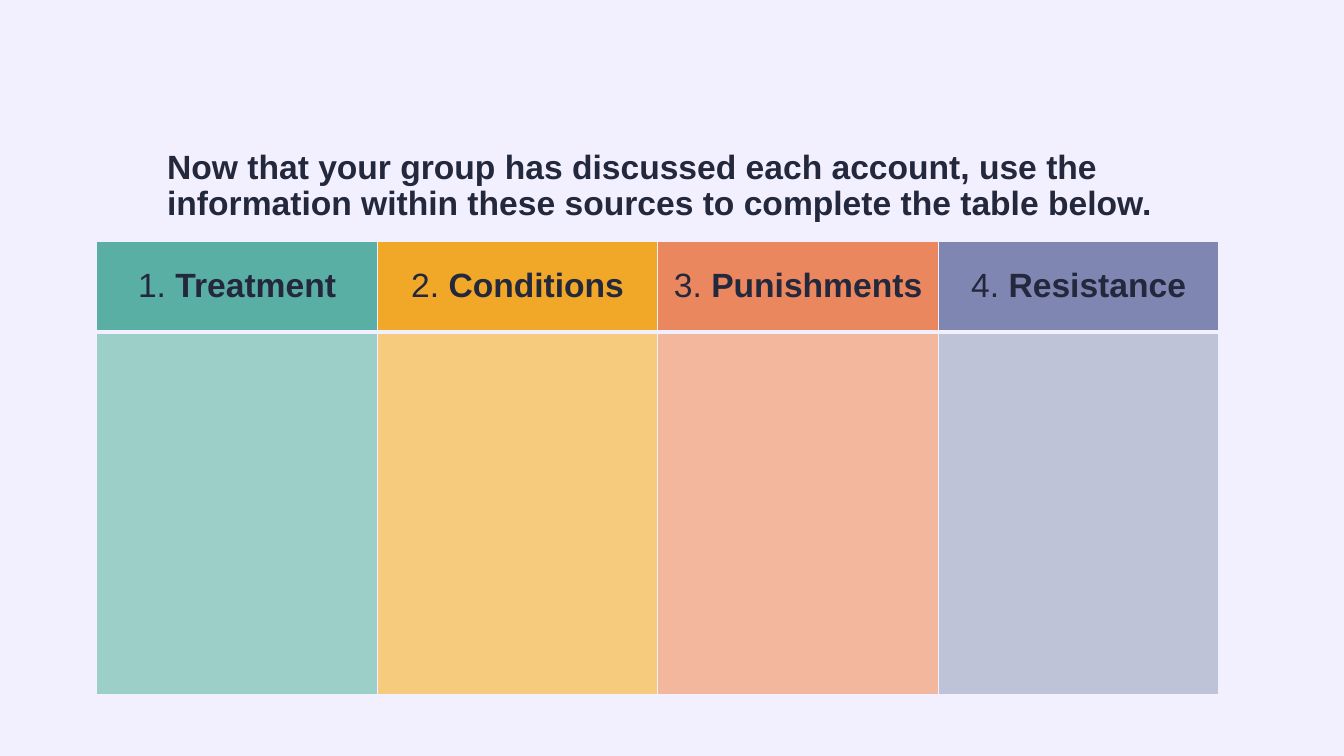
"""Build a slide with a prompt above a four-column table to complete."""
from lxml.etree import SubElement
from pptx import Presentation
from pptx.dml.color import RGBColor
from pptx.enum.text import MSO_ANCHOR, PP_ALIGN
from pptx.oxml.ns import qn
from pptx.util import Inches, Pt

COLOURS = {"page": "F2F0FF", "ink": "24283C"}
TOPICS = [
    ("Treatment", "59AFA4", "9BCFC8"),
    ("Conditions", "F1A828", "F7CB7E"),
    ("Punishments", "EB875E", "F3B79E"),
    ("Resistance", "7E86B1", "BEC3D8"),
]
PROMPT = (
    "Now that your group has discussed each account, use the "
    "information within these sources to complete the table below."
)


class SlideBuilder:
    def __init__(self, page):
        self.page = page
        self.text_format = {"name": "Arial", "size": Pt(24)}
        background = page.background.fill
        background.solid()
        background.fore_color.rgb = RGBColor.from_string(COLOURS["page"])

    def add_span(self, para, text, bold):
        span = para.add_run()
        span.text = text
        for name, value in {**self.text_format, "bold": bold}.items():
            setattr(span.font, name, value)
        span.font.color.rgb = RGBColor.from_string(COLOURS["ink"])

    def add_prompt(self, text, left, top, width, height):
        box = self.page.shapes.add_textbox(
            Inches(left), Inches(top), Inches(width), Inches(height)
        )
        frame = box.text_frame
        frame.word_wrap = True
        frame.vertical_anchor = MSO_ANCHOR.BOTTOM
        para = frame.paragraphs[0]
        para.line_spacing = 0.9
        self.add_span(para, text, True)

    def style_cell(self, cell, fill, widths):
        properties = cell._tc.get_or_add_tcPr()
        for side, width in widths.items():
            line = SubElement(properties, qn(f"a:ln{side}"), w=str(Pt(width)))
            solid = SubElement(line, qn("a:solidFill"))
            SubElement(solid, qn("a:srgbClr"), val=COLOURS["page"])
        cell.fill.solid()
        cell.fill.fore_color.rgb = RGBColor.from_string(fill)

    def add_topic_table(self, topics, left, top, width, row_heights):
        table = self.page.shapes.add_table(
            len(row_heights), len(topics), Inches(left), Inches(top),
            Inches(width), Inches(sum(row_heights)),
        ).table
        for row, height in zip(table.rows, row_heights):
            row.height = Inches(height)
        for index, (topic, head_fill, body_fill) in enumerate(topics):
            head, body = table.cell(0, index), table.cell(1, index)
            self.style_cell(head, head_fill, {"L": 1, "R": 1, "T": 1, "B": 3})
            self.style_cell(body, body_fill, {"L": 1, "R": 1, "T": 3, "B": 1})
            head.vertical_anchor = MSO_ANCHOR.MIDDLE
            para = head.text_frame.paragraphs[0]
            para.alignment = PP_ALIGN.CENTER
            self.add_span(para, f"{index + 1}. ", False)
            self.add_span(para, topic, True)


def main():
    deck = Presentation()
    deck.slide_width, deck.slide_height = Inches(13.33), Inches(7.5)
    builder = SlideBuilder(deck.slides.add_slide(deck.slide_layouts[6]))
    builder.add_prompt(PROMPT, 1.56, 1.36, 11.13, 0.9)
    builder.add_topic_table(TOPICS, 0.96, 2.39, 11.13, [0.9, 3.6])
    deck.save("out.pptx")


if __name__ == "__main__":
    main()
